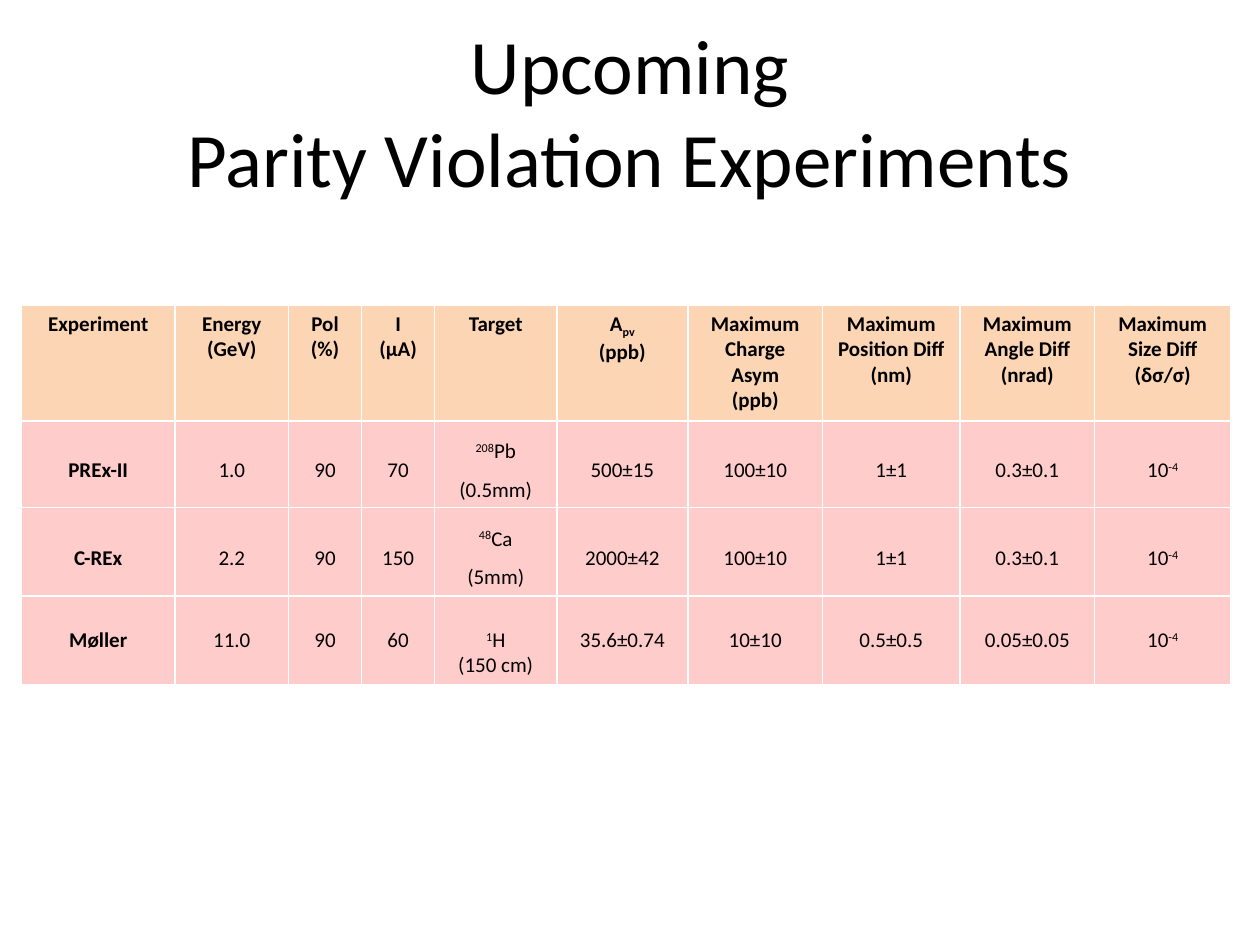
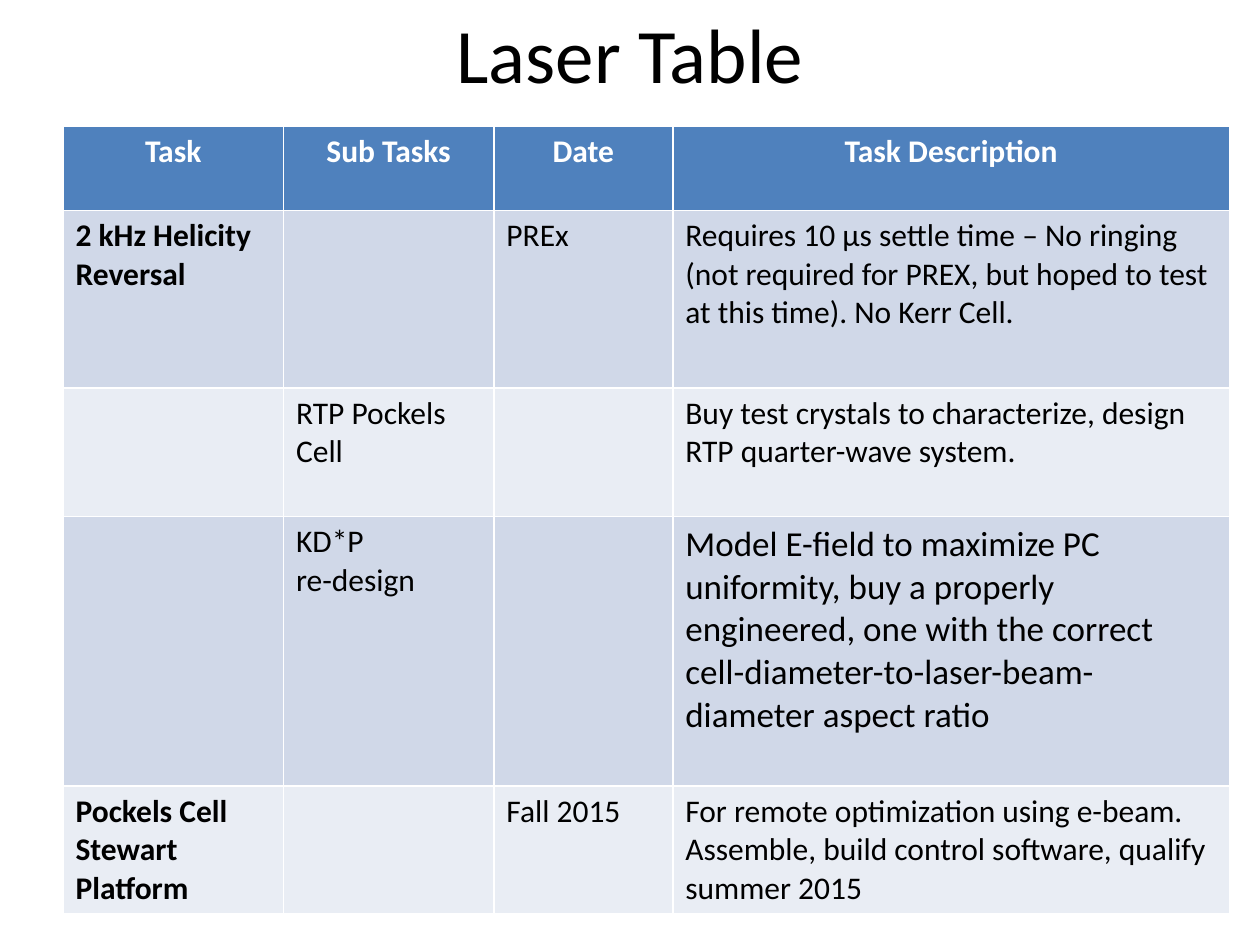
from dataclasses import dataclass

from pptx import Presentation
from pptx.dml.color import RGBColor
from pptx.enum.text import MSO_ANCHOR as Anchor, PP_ALIGN as Align
from pptx.util import Inches, Pt


@dataclass(frozen=True)
class Theme:
    font: str = "Calibri"
    black: str = "000000"
    white: str = "FFFFFF"
    peach: str = "FCD5B5"
    pink: str = "FFCCCC"
    blue: str = "4F81BD"
    bands: tuple = ("D0D8E8", "E9EDF4")
    title_size: int = 44
    task_size: int = 18
    large_task_size: int = 20
    experiment_size: int = 12


THEME = Theme()
BASELINES = {"^": "30000", "_": "-25000"}
TITLE_ONLY = 5

# In all texts, | parts the runs; ^ raises a run and _ lowers it.
EXPERIMENT_COLUMNS = [1.22, 0.9, 0.58, 0.58, 0.97, 1.04, 1.07, 1.09, 1.07, 1.08]
EXPERIMENT_ROWS = [0.92, 0.69, 0.7, 0.7]
EXPERIMENT_HEADER = [
    ["Experiment"], ["Energy", "(GeV)"], ["Pol", "(%)"], ["I", "(µA)"], ["Target"],
    ["A|_pv", "(ppb)"], ["Maximum Charge Asym", "(ppb)"],
    ["Maximum", "Position Diff", "(nm)"], ["Maximum", "Angle Diff", "(nrad)"],
    ["Maximum", "Size Diff", "(δσ/σ)"],
]
EXPERIMENTS = [
    [["PREx-II"], ["1.0"], ["90"], ["70"], ["^208|Pb (0.5mm)"], ["500±15"],
     ["100±10"], ["1±1"], ["0.3±0.1"], ["10|^-4"]],
    [["C-REx"], ["2.2"], ["90"], ["150"], ["^48|Ca", "(5mm)"], ["2000±42"],
     ["100±10"], ["1±1"], ["0.3±0.1"], ["10|^-4"]],
    [["Møller"], ["11.0"], ["90"], ["60"], ["^1|H", "(150 cm)"], ["35.6±0.74"],
     ["10±10"], ["0.5±0.5"], ["0.05±0.05"], ["10|^-4"]],
]

TASK_COLUMNS = [1.75, 1.67, 1.42, 4.42]
TASK_ROWS = [0.67, 1.41, 1.02, 2.14, 1]
TASK_HEADER = [["Task"], ["Sub Tasks"], ["Date"], ["Task Description"]]
TASKS = [
    [["2 kHz Helicity Reversal"], [], ["PREx"],
     ["Requires 10 µs settle time – No ringing",
      "(not required for PREX, but hoped to test at this time). No Kerr Cell."]],
    [[], ["RTP Pockels Cell"], [],
     ["Buy test crystals to characterize, design RTP quarter-wave system."]],
    [[], ["KD*P", "re-design"], [],
     ["Model E-field to maximize PC uniformity, buy a properly engineered, one with "
      "the correct cell-diameter-to-laser-beam-diameter aspect ratio"]],
    [["Pockels Cell Stewart Platform"], [], ["Fall 2015"],
     ["For remote optimization using e-beam.",
      "Assemble, build control software, qualify summer 2015"]],
]


def write_text(frame, paragraphs, size, color=THEME.black, bold=False,
               align=Align.LEFT, line_spacing=None):
    for index, text in enumerate(paragraphs):
        para = frame.add_paragraph() if index else frame.paragraphs[0]
        para.alignment = align
        if line_spacing:
            para.line_spacing = line_spacing
        for piece in text.split("|"):
            if piece == "\n":
                para.add_line_break()
                continue
            span = para.add_run()
            span.text = piece.lstrip("^_")
            span.font.name = THEME.font
            span.font.size = Pt(size)
            span.font.bold = bold
            span.font.color.rgb = RGBColor.from_string(color)
            if piece[0] in BASELINES:
                span.font._element.set("baseline", BASELINES[piece[0]])


def add_titled_slide(deck, title, height):
    slide = deck.slides.add_slide(deck.slide_layouts[TITLE_ONLY])
    box = slide.shapes.title
    box.left, box.top = Inches(0.5), Inches(0)
    box.width, box.height = Inches(9), Inches(height)
    box.text_frame.vertical_anchor = Anchor.MIDDLE
    write_text(box.text_frame, [title], THEME.title_size, align=Align.CENTER)
    return slide


def add_grid(slide, left, top, columns, rows):
    """Add a table; its default style draws the white cell borders."""
    frame = slide.shapes.add_table(len(rows), len(columns), Inches(left), Inches(top),
                                   Inches(sum(columns)), Inches(sum(rows)))
    for column, width in zip(frame.table.columns, columns):
        column.width = Inches(width)
    for row, height in zip(frame.table.rows, rows):
        row.height = Inches(height)
    return frame.table


def fill_cell(cell, paragraphs, fill, size, **text_format):
    cell.fill.solid()
    cell.fill.fore_color.rgb = RGBColor.from_string(fill)
    write_text(cell.text_frame, paragraphs, size, **text_format)


def fill_header(table, header, fill, size, color):
    for column, paragraphs in enumerate(header):
        fill_cell(table.cell(0, column), paragraphs, fill, size, color=color,
                  bold=True, align=Align.CENTER)


def add_experiments_slide(deck):
    slide = add_titled_slide(deck, "Upcoming|\n|Parity Violation Experiments", 1.75)
    table = add_grid(slide, 0.17, 2.42, EXPERIMENT_COLUMNS, EXPERIMENT_ROWS)
    fill_header(table, EXPERIMENT_HEADER, THEME.peach, THEME.experiment_size, THEME.black)
    for row, experiment in enumerate(EXPERIMENTS, start=1):
        is_last = row == len(EXPERIMENTS)
        for column, paragraphs in enumerate(experiment):
            cell = table.cell(row, column)
            fill_cell(cell, paragraphs, THEME.pink, THEME.experiment_size,
                      bold=column == 0, align=Align.CENTER,
                      line_spacing=None if is_last else 1.5)
            # The last row hangs one line below its top edge; the others are centred
            if is_last:
                cell.margin_top = Inches(0.25)
            else:
                cell.vertical_anchor = Anchor.MIDDLE
                cell.margin_left = cell.margin_right = Inches(0.08)
                cell.margin_top = cell.margin_bottom = Inches(0.04)


def add_tasks_slide(deck):
    slide = add_titled_slide(deck, "Laser Table", 0.83)
    table = add_grid(slide, 0.5, 1, TASK_COLUMNS, TASK_ROWS)
    fill_header(table, TASK_HEADER, THEME.blue, THEME.task_size, THEME.white)
    for row, task in enumerate(TASKS, start=1):
        band = THEME.bands[(row - 1) % len(THEME.bands)]
        for column, paragraphs in enumerate(task):
            is_large = (row, column) == (3, 3)
            size = THEME.large_task_size if is_large else THEME.task_size
            fill_cell(table.cell(row, column), paragraphs, band, size, bold=column == 0)


def main():
    deck = Presentation()
    deck.slide_width, deck.slide_height = Inches(10), Inches(7.5)
    add_experiments_slide(deck)
    add_tasks_slide(deck)
    deck.save("out.pptx")


if __name__ == "__main__":
    main()
